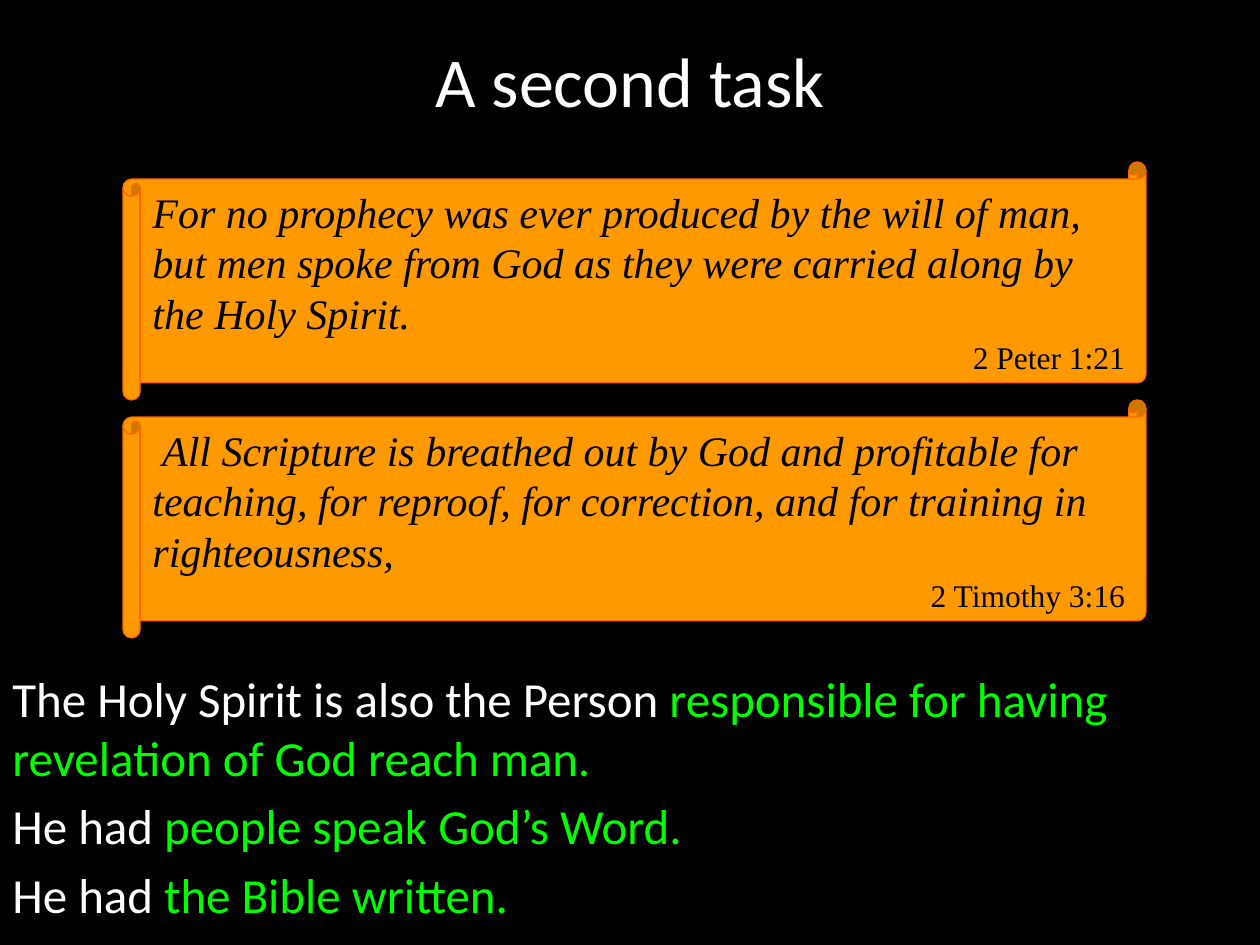
"""Build the slide 'A second task' with two scripture scrolls and a summary."""
from dataclasses import dataclass

from pptx import Presentation
from pptx import util as u
from pptx.dml.color import RGBColor
from pptx.enum import shapes, text

PX = 914400 / 126
WIDTH, HEIGHT = 1260, 945
COLORS = {
    "black": "000000",
    "white": "FFFFFF",
    "green": "00FF00",
    "orange": "FF9900",
    "edge": "FF6600",
}
SANS, SERIF = "Calibri", "Times New Roman"
SCROLL_LEFT, SCROLL_TOP, SCROLL_WIDTH, SCROLL_HEIGHT = 123, 162, 1023, 238


@dataclass
class Verse:
    words: str
    reference: str


@dataclass
class Point:
    lead: str
    answer: str


VERSES = [
    Verse("For no prophecy was ever produced by the will of man, but men spoke "
          "from God as they were carried along by the Holy Spirit.",
          "2 Peter 1:21"),
    Verse(" All Scripture is breathed out by God and profitable for teaching, "
          "for reproof, for correction, and for training in righteousness,",
          "2 Timothy 3:16"),
]
POINTS = [
    Point("The Holy Spirit is also the Person ",
          "responsible for having revelation of God reach man."),
    Point("He had ", "people speak God’s Word."),
    Point("He had ", "the Bible written."),
]


def px(length: int) -> u.Emu:
    """Turn whole pixels into EMU."""
    return u.Emu(round(length * PX))


def rgb(name: str) -> RGBColor:
    """Look up a named colour."""
    return RGBColor.from_string(COLORS[name])


def write(para, words: str, *, size: int, font: str, color: str,
          italic: bool = False) -> None:
    """Add one formatted span to a paragraph."""
    span = para.add_run()
    span.text = words
    span.font.size = u.Pt(size)
    span.font.name = font
    span.font.italic = italic
    span.font.color.rgb = rgb(color)


def draw_title(page, words: str) -> None:
    """Place and format the title placeholder."""
    title = page.shapes.title
    title.left, title.top = px(0), px(0)
    title.width, title.height = px(WIDTH), px(158)
    frame = title.text_frame
    frame.auto_size = text.MSO_AUTO_SIZE.NONE
    frame.vertical_anchor = text.MSO_ANCHOR.MIDDLE
    para = frame.paragraphs[0]
    para.alignment = text.PP_ALIGN.CENTER
    write(para, words, size=40, font=SANS, color="white")


def draw_scroll(page, verse: Verse, top: int) -> None:
    """Draw a scroll with a verse and its reference."""
    scroll = page.shapes.add_shape(
        shapes.MSO_SHAPE.HORIZONTAL_SCROLL,
        px(SCROLL_LEFT), px(top), px(SCROLL_WIDTH), px(SCROLL_HEIGHT))
    scroll.adjustments[0] = 0.072
    scroll.shadow.inherit = False
    scroll.fill.solid()
    scroll.fill.fore_color.rgb = rgb("orange")
    scroll.line.color.rgb = rgb("edge")
    scroll.line.width = u.Pt(0.75)
    frame = scroll.text_frame
    frame.word_wrap = True
    frame.auto_size = text.MSO_AUTO_SIZE.SHAPE_TO_FIT_TEXT
    frame.vertical_anchor = text.MSO_ANCHOR.MIDDLE
    quote, source = frame.paragraphs[0], frame.add_paragraph()
    quote.alignment = text.PP_ALIGN.LEFT
    source.alignment = text.PP_ALIGN.RIGHT
    write(quote, verse.words, size=24, font=SERIF, color="black", italic=True)
    write(source, verse.reference, size=18, font=SERIF, color="black")


def draw_points(page, points: list[Point]) -> None:
    """Write the summary points below the scrolls."""
    top = 662
    box = page.shapes.add_textbox(px(0), px(top), px(WIDTH), px(HEIGHT - top))
    frame = box.text_frame
    frame.word_wrap = True
    for index, point in enumerate(points):
        para = frame.add_paragraph() if index else frame.paragraphs[0]
        para.space_before = u.Pt(5.6)
        write(para, point.lead, size=28, font=SANS, color="white")
        write(para, point.answer, size=28, font=SANS, color="green")


def main() -> None:
    """Build and save the deck."""
    deck = Presentation()
    deck.slide_width, deck.slide_height = px(WIDTH), px(HEIGHT)
    page = deck.slides.add_slide(deck.slide_layouts[5])
    page.background.fill.solid()
    page.background.fill.fore_color.rgb = rgb("black")
    draw_title(page, "A second task")
    draw_points(page, POINTS)
    for index, verse in enumerate(VERSES):
        draw_scroll(page, verse, SCROLL_TOP + index * SCROLL_HEIGHT)
    deck.save("out.pptx")


if __name__ == "__main__":
    main()
